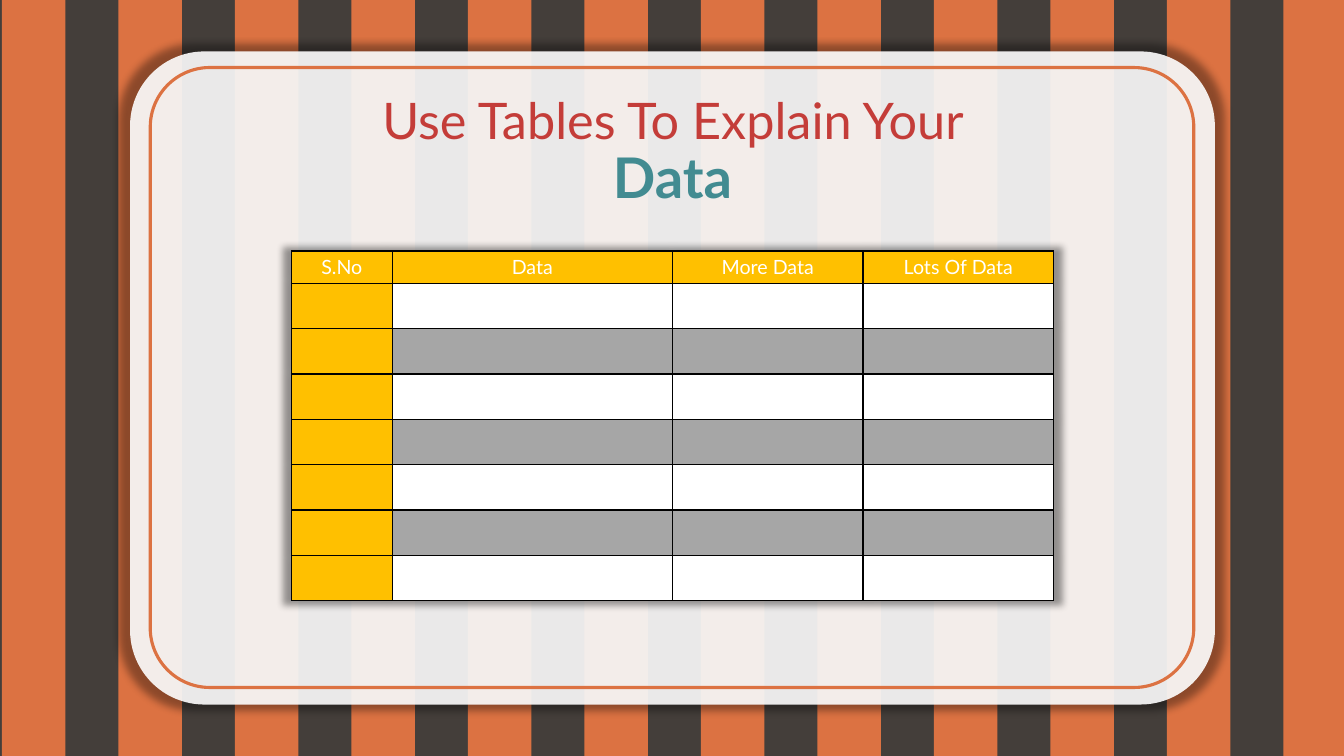
from lxml import etree
from pptx import Presentation
from pptx.dml.color import RGBColor
from pptx.enum.shapes import MSO_SHAPE
from pptx.enum.text import MSO_ANCHOR, MSO_AUTO_SIZE, PP_ALIGN
from pptx.oxml import parse_xml
from pptx.oxml.ns import nsdecls, qn
from pptx.util import Inches, Pt

RECT = MSO_SHAPE.RECTANGLE
ROUNDED = MSO_SHAPE.ROUNDED_RECTANGLE
CENTER = PP_ALIGN.CENTER
BOTTOM = MSO_ANCHOR.BOTTOM
NO_AUTOFIT = MSO_AUTO_SIZE.NONE

CHARCOAL = RGBColor(0x44, 0x3E, 0x3A)
ORANGE = RGBColor(0xDC, 0x72, 0x42)
WHITE = RGBColor(0xFF, 0xFF, 0xFF)
RED = RGBColor(0xC4, 0x3D, 0x39)
TEAL = RGBColor(0x42, 0x8B, 0x91)
AMBER = RGBColor(0xFF, 0xC0, 0x00)
GRAY = RGBColor(0xA6, 0xA6, 0xA6)
FONT = "Lato"
WIDTH, HEIGHT = 13.33, 7.5

GLOW = (
    f'<a:effectLst {nsdecls("a")}><a:outerShdw blurRad="63500" sx="102000" sy="102000" '
    'algn="ctr" rotWithShape="0"><a:prstClr val="black"><a:alpha val="40000"/>'
    '</a:prstClr></a:outerShdw></a:effectLst>'
)


def add_block(kind, left, top, width, height):
    block = slide.shapes.add_shape(
        kind, Inches(left), Inches(top), Inches(width), Inches(height))
    block.shadow.inherit = False
    block.line.fill.background()
    return block


def add_run(paragraph, text, size, color, bold=False):
    run = paragraph.add_run()
    run.text = text
    run.font.name = FONT
    run.font.size = Pt(size)
    run.font.bold = bold
    run.font.color.rgb = color


prs = Presentation()
prs.slide_width, prs.slide_height = Inches(WIDTH), Inches(HEIGHT)
slide = prs.slides.add_slide(prs.slide_layouts[5])
slide.background.fill.solid()
slide.background.fill.fore_color.rgb = CHARCOAL

STRIPES = 12
FIRST_STRIPE, LAST_STRIPE = 0.02, 12.73
pitch = (LAST_STRIPE - FIRST_STRIPE) / (STRIPES - 1)
for index in range(STRIPES):
    left = FIRST_STRIPE + index * pitch
    stripe = add_block(RECT, left, 0, min(0.63, WIDTH - left), HEIGHT)
    stripe.fill.solid()
    stripe.fill.fore_color.rgb = ORANGE

panel = add_block(ROUNDED, 1.29, 0.51, 10.76, 6.48)
panel.adjustments[0] = 0.114
panel.fill.solid()
panel.fill.fore_color.rgb = WHITE
panel_color = panel.fill._xPr.find(qn("a:solidFill"))[0]
etree.SubElement(panel_color, qn("a:alpha"), val="90000")
panel_props = panel._element.spPr
panel_props.replace(panel_props.find(qn("a:effectLst")), parse_xml(GLOW))

frame = add_block(ROUNDED, 1.49, 0.67, 10.35, 6.15)
frame.adjustments[0] = 0.096
frame.fill.background()
frame.line.color.rgb = ORANGE
frame.line.width = Pt(2.25)

title = slide.shapes.title
slide.shapes._spTree.append(title._element)
title.left, title.top = Inches(3.31), Inches(0.87)
title.width, title.height = Inches(6.72), Inches(1.32)
heading = title.text_frame
heading.word_wrap = True
heading.auto_size = NO_AUTOFIT
heading.vertical_anchor = BOTTOM
heading.margin_left = heading.margin_right = Inches(0.1)
heading.margin_top = heading.margin_bottom = Inches(0.1)
headline = heading.paragraphs[0]
headline.alignment = CENTER
headline.line_spacing = 0.9
add_run(headline, "Use Tables To Explain Your ", 36, RED)
add_run(headline, "Data", 40, TEAL, bold=True)

HEADERS = ["S.No", "Data", "More Data", "Lots Of Data"]
COLUMNS = [1, 2.78, 1.89, 1.89]
ROWS = [0.32] + [0.45] * 7
table = slide.shapes.add_table(
    len(ROWS), len(COLUMNS), Inches(2.89), Inches(2.49),
    Inches(sum(COLUMNS)), Inches(sum(ROWS))).table
table.first_row = table.horz_banding = False
table._tbl.tblPr.insert(0, parse_xml(GLOW))
for column, width in zip(table.columns, COLUMNS):
    column.width = Inches(width)
for row_index, height in enumerate(ROWS):
    table.rows[row_index].height = Inches(height)
    for column_index, header in enumerate(HEADERS):
        cell = table.cell(row_index, column_index)
        cell.margin_left = cell.margin_right = Inches(0.08)
        cell.margin_top = cell.margin_bottom = Inches(0.04)
        cell_props = cell._tc.get_or_add_tcPr()
        for side in ("lnL", "lnR", "lnT", "lnB"):
            cell_props.append(parse_xml(
                f'<a:{side} {nsdecls("a")} w="12700"><a:solidFill>'
                f'<a:srgbClr val="000000"/></a:solidFill></a:{side}>'))
        cell.fill.solid()
        if row_index == 0 or column_index == 0:
            cell.fill.fore_color.rgb = AMBER
        else:
            cell.fill.fore_color.rgb = WHITE if row_index % 2 else GRAY
        if row_index == 0:
            label = cell.text_frame.paragraphs[0]
            label.alignment = CENTER
            add_run(label, header, 14, WHITE)

prs.save("out.pptx")
